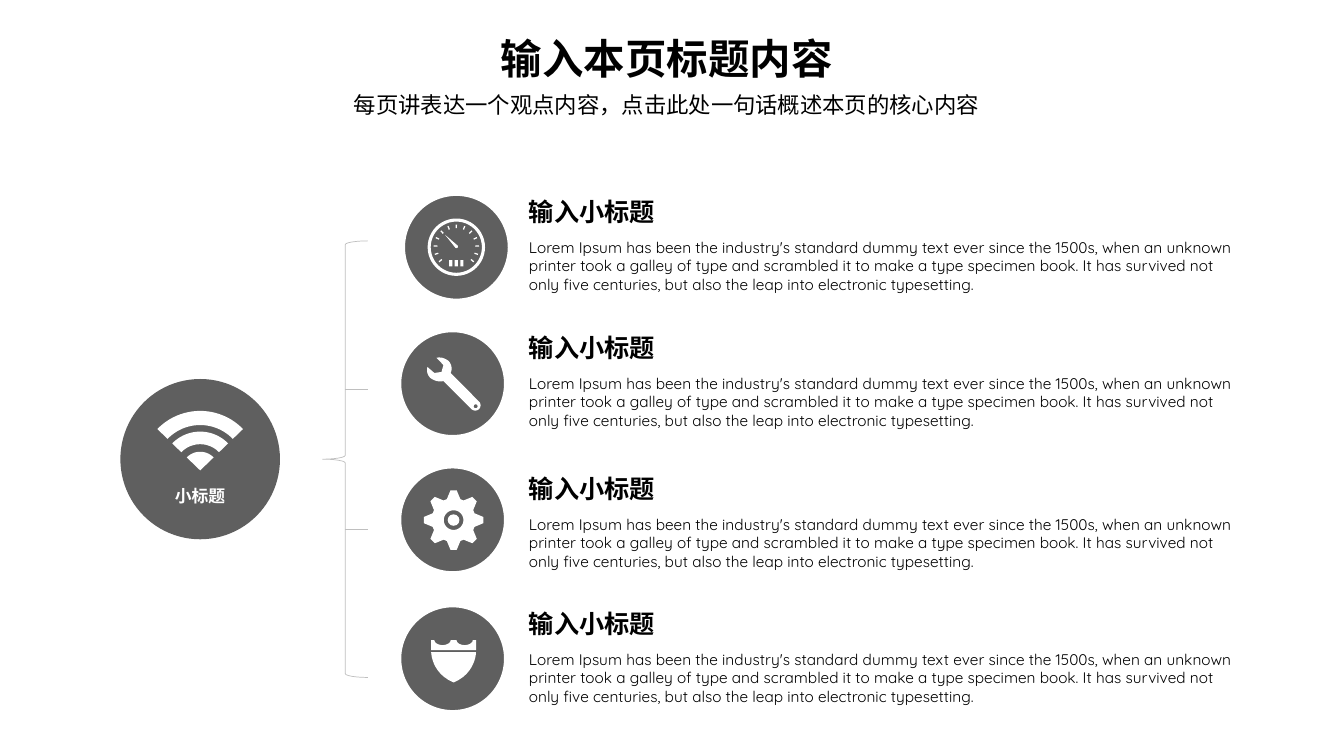
from dataclasses import dataclass
from math import cos, radians, sin
from typing import Callable

from lxml.etree import SubElement
from pptx import Presentation
from pptx.dml.color import RGBColor
from pptx.enum.shapes import MSO_CONNECTOR, MSO_SHAPE
from pptx.enum.text import PP_ALIGN
from pptx.oxml.ns import qn
from pptx.util import Pt

FONT = "Quicksand"
BLACK, WHITE, GREY, RULE = "000000", "FFFFFF", "5F5F5F", "BFBFBF"
HEADING = "输入小标题"
BODY = (
    "Lorem Ipsum has been the industry's standard dummy text ever since the 1500s, "
    "when an unknown printer took a galley of type and scrambled it to make a type "
    "specimen book. It has survived not only five centuries, but also the leap into "
    "electronic typesetting."
)
DISC_SIZE = 79.4

Point = tuple[float, float]
Contour = list[Point]

presentation = Presentation()
presentation.slide_width, presentation.slide_height = Pt(960), Pt(540)
slide = presentation.slides.add_slide(presentation.slide_layouts[6])


def colour(value: str) -> RGBColor:
    return RGBColor.from_string(value)


# Drawing helpers
def paint(shape, fill: str | None, line: str | None = None, width: float = 0) -> None:
    shape.shadow.inherit = False
    if fill:
        shape.fill.solid()
        shape.fill.fore_color.rgb = colour(fill)
    else:
        shape.fill.background()
    if line:
        shape.line.color.rgb = colour(line)
        shape.line.width = Pt(width)
    else:
        shape.line.fill.background()


def preset(kind: MSO_SHAPE, x: float, y: float, w: float, h: float,
           fill: str | None, line: str | None = None, width: float = 0) -> None:
    shape = slide.shapes.add_shape(kind, Pt(x), Pt(y), Pt(w), Pt(h))
    paint(shape, fill, line, width)


def outline(x: float, y: float, *contours: Contour) -> None:
    """Draw one white shape from contours given relative to (x, y)."""
    placed = [[(Pt(x + dx), Pt(y + dy)) for dx, dy in contour] for contour in contours]
    builder = slide.shapes.build_freeform(*placed[0][0], scale=1.0)
    for index, contour in enumerate(placed):
        if index:
            builder.move_to(*contour[0])
        builder.add_line_segments(contour[1:], close=True)
    paint(builder.convert_to_shape(), WHITE)


def arc(cx: float, cy: float, rx: float, ry: float, start: float, end: float,
        steps: int = 24) -> Contour:
    angles = [radians(start + (end - start) * i / steps) for i in range(steps + 1)]
    return [(cx + rx * cos(a), cy + ry * sin(a)) for a in angles]


def circle(radius: float, cx: float = 0, cy: float = 0) -> Contour:
    return arc(cx, cy, radius, radius, 0, 360, 48)[:-1]


def polar(radius: float, degrees: float) -> Point:
    return radius * cos(radians(degrees)), radius * sin(radians(degrees))


def curve(a: Point, b: Point, c: Point, d: Point, steps: int = 12) -> Contour:
    def at(t: float, axis: int) -> float:
        u = 1 - t
        return (u**3 * a[axis] + 3 * u * u * t * b[axis]
                + 3 * u * t * t * c[axis] + t**3 * d[axis])
    return [(at(i / steps, 0), at(i / steps, 1)) for i in range(steps + 1)]


def write(text: str, x: float, y: float, w: float, h: float, size: float,
          bold: bool = False, ink: str = BLACK, centred: bool = False,
          wrap: bool = True):
    box = slide.shapes.add_textbox(Pt(x), Pt(y), Pt(w), Pt(h))
    frame = box.text_frame
    frame.word_wrap = wrap
    paragraph = frame.paragraphs[0]
    paragraph.text = text
    paragraph.alignment = PP_ALIGN.CENTER if centred else PP_ALIGN.LEFT
    font = paragraph.font
    font.name, font.size, font.bold = FONT, Pt(size), bold
    font.color.rgb = colour(ink)
    return frame


# Icons, each drawn around its own centre
def draw_wifi(x: float, y: float) -> None:
    for outer, inner in ((13.3, 0), (27.7, 18.7), (42.5, 32.4)):
        outline(x, y, arc(0, 0, outer, outer, -136, -44)
                + arc(0, 0, inner, inner, -44, -136))


def draw_gauge(x: float, y: float) -> None:
    outline(x, y, circle(20.5), circle(18.3))
    for index in range(3):
        preset(MSO_SHAPE.RECTANGLE, x - 5.2 + 4 * index, y + 9.2, 2.3, 4.6, WHITE)
    outline(x, y, [(-8.1, -8.9)] + arc(0, -0.5, 1.1, 1.1, -60, 150))
    for index in range(13):
        angle = -220 + index * 260 / 12
        outline(x, y, [polar(16.2, angle - 1.6), polar(16.2, angle + 1.6),
                       polar(13.6, angle + 1.9), polar(13.6, angle - 1.9)])


def draw_wrench(x: float, y: float) -> None:
    upper_jaw = (curve((-1.4, -7.6), (0, -10.4), (-0.7, -14), (-2.9, -16.2))
                 + curve((-2.9, -16.2), (-5.8, -18.4), (-8.6, -19.1), (-11.5, -18.4)))
    mouth = [(-6.5, -13.3), (-7.9, -8.3), (-13, -7.6)]
    lower_jaw = (curve((-18, -11.9), (-18.7, -9), (-18, -6.1), (-15.8, -4))
                 + curve((-15.8, -4), (-13, -1.8), (-9.4, -1.1), (-6.5, -1.8)))
    handle_end = arc(16.2, 15.5, 3.8, 3.8, 135, -45)
    outline(x, y, upper_jaw + mouth + lower_jaw + handle_end, circle(1.4, 16.5, 16.2))


def draw_gear(x: float, y: float) -> None:
    teeth = [polar(radius, 45 * tooth + angle) for tooth in range(8)
             for radius, angle in ((15.7, -18), (21.3, -6), (21.3, 6), (15.7, 18))]
    outline(x + 0.7, y + 0.2, teeth, circle(7))
    preset(MSO_SHAPE.OVAL, x - 3.5, y - 3.9, 8.4, 8.2, WHITE)


def draw_shield(x: float, y: float) -> None:
    half, top, tip = 16, -4.7, 17
    left = curve((-half, top), (-half, top), (-half, 10.4), (0, tip))
    right = curve((0, tip), (half, 10.4), (half, top), (half, top))
    outline(x + 0.7, y, left + right)
    bites = [arc(cx, -13.3, 5.8, 3.6, 180, 0) for cx in (-7.9, 7.9)]
    outline(x + 0.7, y, [(-half, -13.3), *bites[0], *bites[1],
                         (half, -13.3), (half, -6.1), (-half, -6.1)])


@dataclass
class Item:
    disc_x: float
    disc_y: float
    heading_top: float
    draw_icon: Callable[[float, float], None]


ITEMS = [
    Item(326, 176.6, 136.8, draw_gauge),
    Item(323.3, 274, 234, draw_wrench),
    Item(323.3, 371.3, 334.8, draw_gear),
    Item(323.3, 470.5, 431.3, draw_shield),
]

# Page title and subtitle
title = write("输入本页标题内容", 60.5, 13.7, 831.6, 46.8, 29.6, bold=True, centred=True)
title.paragraphs[0].line_spacing = Pt(42)
subtitle = write("每页讲表达一个观点内容，点击此处一句话概述本页的核心内容",
                 60.5, 63.4, 831.6, 28.1, 16, centred=True)
subtitle.paragraphs[0].line_spacing = 0.9
subtitle.paragraphs[0].space_before = Pt(10)

# Brace with its two inner branches
preset(MSO_SHAPE.LEFT_BRACE, 230.4, 172.1, 32.4, 311.8, None, RULE, 0.5)
for branch_y in (278, 378.4):
    branch = slide.shapes.add_connector(
        MSO_CONNECTOR.STRAIGHT, Pt(246.4), Pt(branch_y), Pt(262.8), Pt(branch_y))
    branch.line.color.rgb = colour(RULE)
    branch.line.width = Pt(0.5)
    SubElement(branch._element.spPr, qn("a:effectLst"))

# Main topic
preset(MSO_SHAPE.OVAL, 86, 270.7, 114, 114.5, GREY)
topic = write("小标题", 96.5, 344.9, 92.9, 18, 12, bold=True, ink=WHITE, centred=True)
topic.margin_left = topic.margin_right = Pt(3.6)
topic.margin_top = topic.margin_bottom = Pt(1.8)
draw_wifi(143, 336)

# Items
for item in ITEMS:
    preset(MSO_SHAPE.OVAL, item.disc_x - DISC_SIZE / 2, item.disc_y - DISC_SIZE / 2,
           DISC_SIZE, DISC_SIZE, GREY, WHITE, 6)
    item.draw_icon(item.disc_x, item.disc_y)
    write(HEADING, 370.8, item.heading_top, 105.1, 28.8, 18, bold=True, wrap=False)
    write(BODY, 370.8, item.heading_top + 29.5, 518.4, 47.5, 11)

presentation.save("out.pptx")
